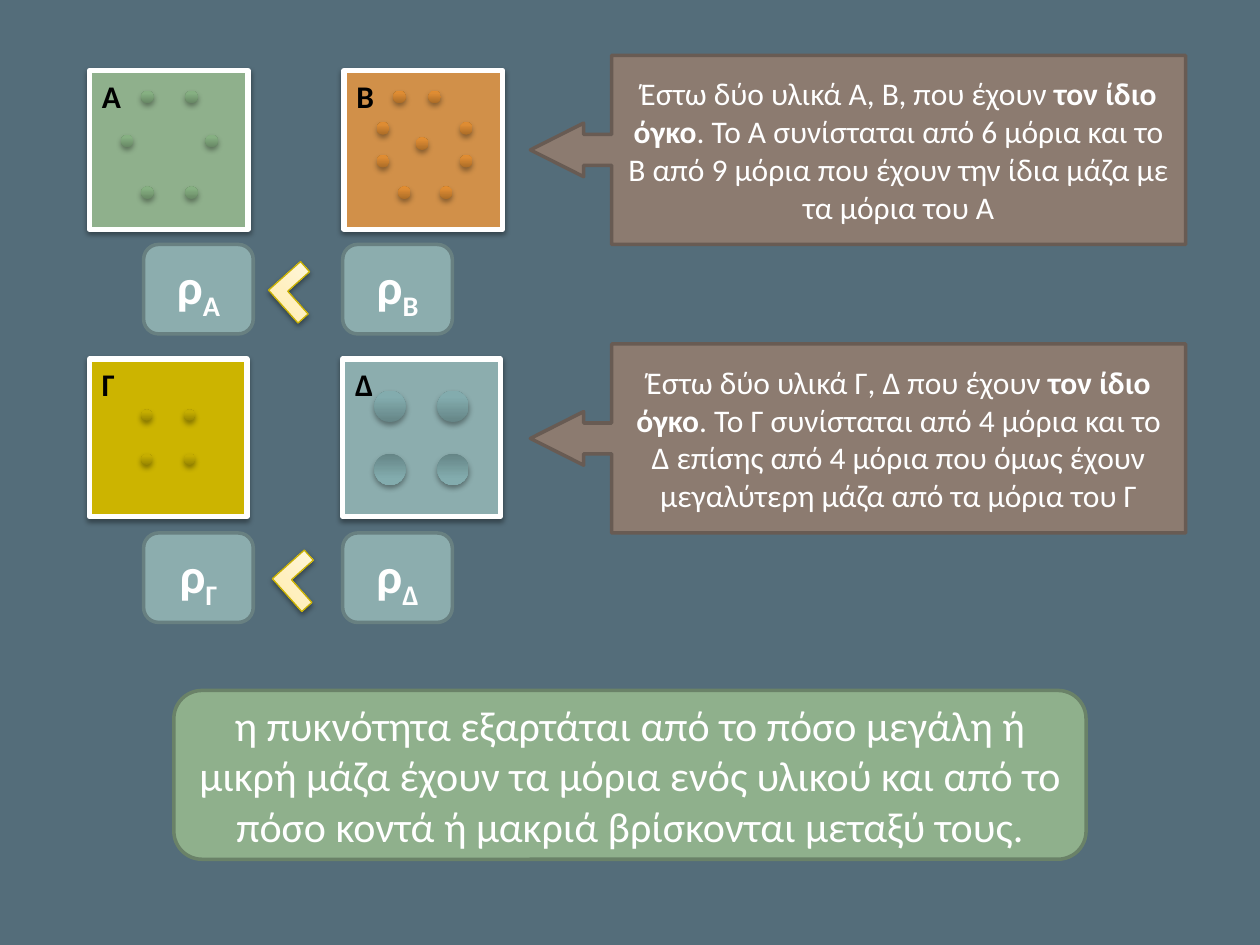
from itertools import product
from lxml.etree import SubElement
from pptx import Presentation
from pptx.dml.color import RGBColor
from pptx.enum.shapes import MSO_SHAPE as Shape
from pptx.enum.text import MSO_ANCHOR as Anchor, PP_ALIGN as Align
from pptx.oxml.ns import qn
from pptx.util import Inches, Pt

WHITE, BLACK = "FFFFFF", "000000"
BACKGROUND, BROWN, TEAL, GREEN = "546D7A", "8C7B70", "8CADAE", "8FB08C"
CHEVRON = [(0, "FFEBA5"), (35, "FFF0BF"), (100, "FFF9E7")]

# Material: name, row, left, side, fill, molecule gradient, molecule size, molecule offsets
MATERIALS = [
    ("A", 0, 0.71, 1.26, GREEN, [(0, "678764"), (80, "86B082"), (100, "86B182")], 0.1,
     [(0.41, 0.16), (0.76, 0.16), (0.25, 0.51), (0.92, 0.51), (0.41, 0.92), (0.76, 0.92)]),
    ("B", 0, 2.73, 1.26, "D19049", [(0, "AB6C27"), (80, "DE8C33"), (100, "E38D30")], 0.1,
     [(0.39, 0.16), (0.67, 0.16), *product((0.26, 0.92), (0.41, 0.67)),
      (0.57, 0.53), (0.43, 0.92), (0.76, 0.92)]),
    ("Γ", 1, 0.71, 1.25, "CCB400", [(0, "988600"), (80, "C6AE00"), (100, "C7AF00")], 0.09,
     list(product((0.41, 0.75), (0.4, 0.75)))),
    ("Δ", 1, 2.72, 1.25, TEAL, [(0, "658586"), (80, "83ACAE"), (100, "82AEAF")], 0.25,
     list(product((0.25, 0.75), (0.25, 0.75)))),
]
# One callout per row: (text, bold) runs
CALLOUTS = [
    [("Έστω δύο υλικά Α, Β, που έχουν ", False), ("τον ίδιο όγκο", True),
     (". Το Α συνίσταται από 6 μόρια και το Β από 9 μόρια που έχουν την ίδια μάζα "
      "με τα μόρια του Α", False)],
    [("Έστω δύο υλικά Γ, Δ που έχουν ", False), ("τον ίδιο όγκο", True),
     (". Το Γ συνίσταται από 4 μόρια και το Δ επίσης από 4 μόρια που όμως έχουν "
      "μεγαλύτερη μάζα από τα μόρια του Γ", False)],
]
CONCLUSION = ("η πυκνότητα εξαρτάται από το πόσο μεγάλη ή μικρή μάζα έχουν τα μόρια ενός "
              "υλικού και από το πόσο κοντά ή μακριά βρίσκονται μεταξύ τους.")

ROW_STEP = 2.29
SQUARE_TOP, CALLOUT_TOP, DENSITY_TOP = 0.56, 0.44, 1.94
DENSITY_LEFTS = {"A": 1.14, "B": 2.72, "Γ": 1.14, "Δ": 2.72}
CHEVRON_LEFTS = [2.2, 2.23]


def color(value):
    return RGBColor.from_string(value)


def add_color(parent, value):
    return SubElement(parent, qn("a:srgbClr"), val=value)


def set_gradient(shape, stops):
    """Fill with (percent, colour) stops running from bottom to top."""
    shape.fill.gradient()
    gradient = shape._element.spPr.find(qn("a:gradFill"))
    stop_list = gradient.find(qn("a:gsLst"))
    for stop in list(stop_list):
        stop_list.remove(stop)
    for percent, value in stops:
        add_color(SubElement(stop_list, qn("a:gs"), pos=str(percent * 1000)), value)
    gradient.find(qn("a:lin")).set("ang", "16200000")


def set_shadow(shape, opacity, distance):
    effects = shape._element.spPr.find(qn("a:effectLst"))
    shadow = SubElement(effects, qn("a:outerShdw"), blurRad=str(Pt(3.1)), dist=str(Pt(distance)),
                        dir="5400000", rotWithShape="0")
    SubElement(add_color(shadow, BLACK), qn("a:alpha"), val=str(opacity * 1000))


def add_shape(parent, kind, place, fill, line=None, width=2, adjust=()):
    shape = parent.shapes.add_shape(kind, *map(Inches, place))
    for index, value in enumerate(adjust):
        shape.adjustments[index] = value
    if isinstance(fill, str):
        shape.fill.solid()
        shape.fill.fore_color.rgb = color(fill)
    else:
        set_gradient(shape, fill)
    if line:
        shape.line.color.rgb = color(line)
        shape.line.width = Pt(width)
    else:
        shape.line.fill.background()
    shape.shadow.inherit = False
    return shape


def write(shape, runs, size, value=WHITE, align=Align.CENTER, anchor=Anchor.MIDDLE):
    """Write (text, bold) runs as one paragraph and return its runs."""
    frame = shape.text_frame
    frame.word_wrap = True
    frame.vertical_anchor = anchor
    para = frame.paragraphs[0]
    para.alignment = align
    for text, bold in runs:
        span = para.add_run()
        span.text = text
        span.font.name, span.font.size, span.font.bold = "Calibri", Pt(size), bold
        span.font.color.rgb = color(value)
    return para.runs


def add_material(page, name, row, left, side, fill, gradient, size, offsets):
    group = page.shapes.add_group_shape()
    top = SQUARE_TOP + row * ROW_STEP
    square = add_shape(group, Shape.RECTANGLE, (left, top, side, side), fill, WHITE, 3)
    set_shadow(square, 38, 1.6)
    write(square, [(name, True)], 18, BLACK, Align.LEFT, Anchor.TOP)
    for x, y in offsets:
        molecule = add_shape(group, Shape.OVAL, (left + x, top + y, size, size), gradient)
        set_shadow(molecule, 35, 1.8)
        if name == "Δ" and y > side / 2:
            molecule._element.spPr.find(qn("a:xfrm")).set("flipV", "1")


def add_density(page, name, row):
    place = (DENSITY_LEFTS[name], DENSITY_TOP + row * ROW_STEP, 0.87, 0.71)
    box = add_shape(page, Shape.ROUNDED_RECTANGLE, place, TEAL, "688081")
    subscript = write(box, [("ρ", True), (name, True)], 28)[1]
    subscript._r.get_or_add_rPr().set("baseline", "-25000")


def main():
    deck = Presentation()
    deck.slide_width, deck.slide_height = Inches(10), Inches(7.5)
    page = deck.slides.add_slide(deck.slide_layouts[6])
    page.background.fill.solid()
    page.background.fill.fore_color.rgb = color(BACKGROUND)

    for material in MATERIALS:
        add_material(page, *material)
    for row, runs in enumerate(CALLOUTS):
        callout = add_shape(page, Shape.LEFT_ARROW_CALLOUT,
                            (4.21, CALLOUT_TOP + row * ROW_STEP, 5.2, 1.5),
                            BROWN, "685B53", adjust=(0.163, 0.142, 0.282, 0.876))
        write(callout, runs, 18)
    for name, row, *_ in MATERIALS:
        add_density(page, name, row)
    for row, left in enumerate(CHEVRON_LEFTS):
        less_than = add_shape(page, Shape.CORNER, (left, 2.15 + row * ROW_STEP, 0.35, 0.34),
                              CHEVRON, "C8B000", 0.75, (0.316, 0.316))
        less_than.rotation = 48.2
        set_shadow(less_than, 38, 1.6)
    conclusion = add_shape(page, Shape.ROUNDED_RECTANGLE, (1.38, 5.48, 7.24, 1.34),
                           GREEN, "6A8268")
    write(conclusion, [(CONCLUSION, False)], 24)
    deck.save("out.pptx")


if __name__ == "__main__":
    main()
